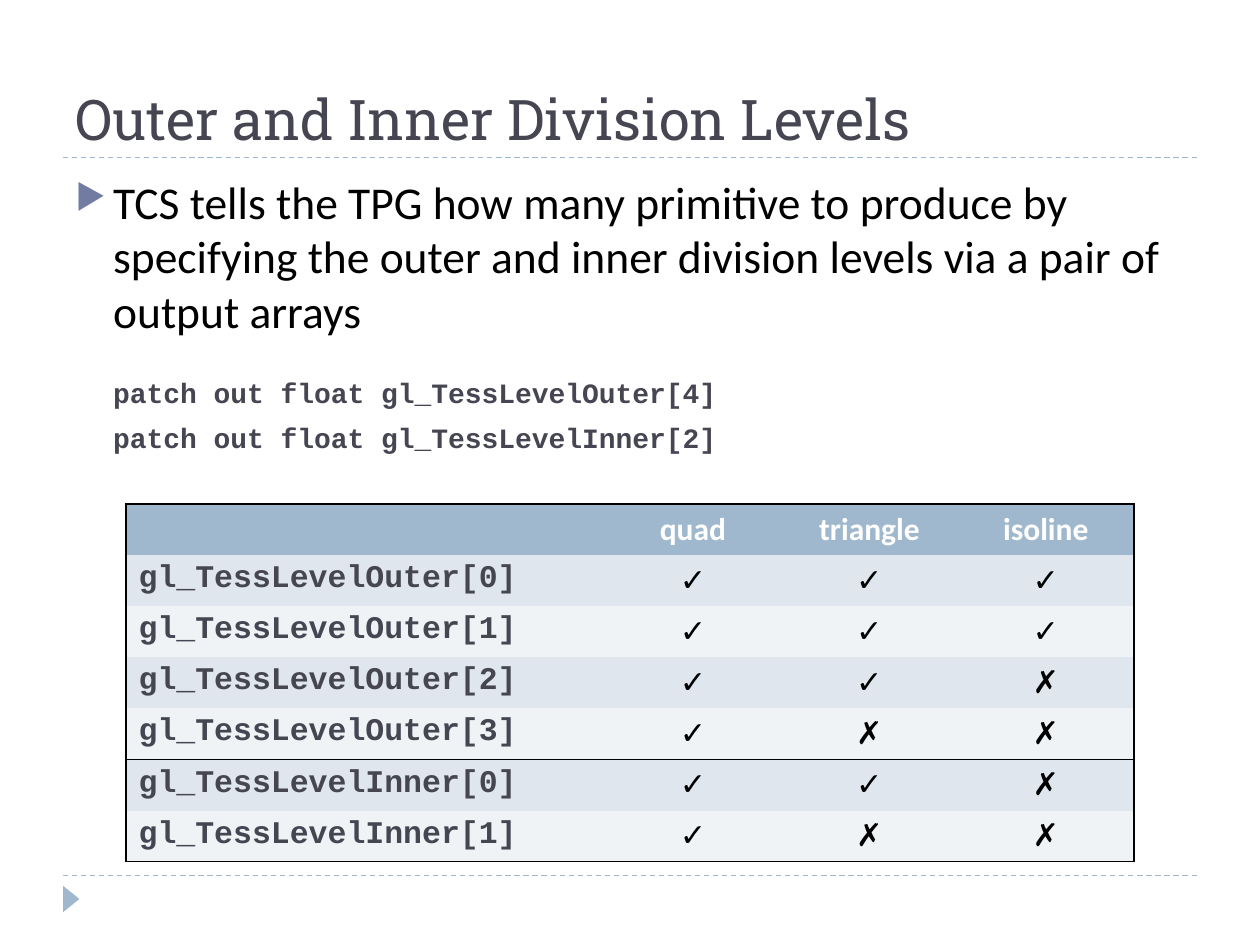
from lxml import etree
from pptx import Presentation, util as u
from pptx.dml.color import RGBColor
from pptx.enum import dml, shapes, text
from pptx.oxml.ns import qn

WIDTH, HEIGHT = 10, 7.5
COLORS = {"paper": "FFFFFF", "ink": "000000", "slate": "464653", "rule": "9FB8CD",
          "bullet": "727CA3", "odd": "DFE6ED", "even": "F0F3F6"}
FORMATS = {
    "title": ({"name": "Roboto Slab", "size": u.Pt(32)}, "slate"),
    "lead": ({"name": "Calibri", "size": u.Pt(26)}, "ink"),
    "code": ({"name": "Courier New", "size": u.Pt(16), "bold": True}, "slate"),
    "head": ({"name": "Calibri", "size": u.Pt(18), "bold": True}, "paper"),
    "level": ({"name": "Courier New", "size": u.Pt(18), "bold": True}, "slate"),
    "mark": ({"name": "Calibri", "size": u.Pt(18), "bold": False}, "ink"),
}
PRIMITIVES = ["quad", "triangle", "isoline"]
LEVELS = [("Outer[0]", "✓✓✓"), ("Outer[1]", "✓✓✓"), ("Outer[2]", "✓✓✗"),
          ("Outer[3]", "✓✗✗"), ("Inner[0]", "✓✓✗"), ("Inner[1]", "✓✗✗")]
LAST_OUTER = 4


def color(name):
    return RGBColor.from_string(COLORS[name])


def inches(box):
    return [u.Inches(length) for length in box]


def write(para, words, style):
    span = para.add_run()
    span.text = words
    values, ink = FORMATS[style]
    for name, value in values.items():
        setattr(span.font, name, value)
    span.font.color.rgb = color(ink)


def text_frame(page, box, anchor):
    frame = page.shapes.add_textbox(*inches(box)).text_frame
    frame.word_wrap = True
    frame.vertical_anchor = anchor
    return frame


def indent(para, margin, first, before):
    para.space_before = u.Pt(before)
    props = para._p.get_or_add_pPr()
    props.set("marL", str(u.Inches(margin)))
    props.set("indent", str(u.Inches(first)))
    return props


def add_bullet(props):
    tint = etree.SubElement(props, qn("a:buClr"))
    etree.SubElement(tint, qn("a:srgbClr"), val=COLORS["bullet"])
    etree.SubElement(props, qn("a:buSzPct"), val="76000")
    etree.SubElement(props, qn("a:buChar"), char="▶")


def draw_frame(page, box):
    left, top, width, height = box
    for y in (top, top + height):
        rule = page.shapes.add_connector(
            shapes.MSO_CONNECTOR.STRAIGHT, *inches((left, y, left + width, y)))
        rule.line.color.rgb = color("rule")
        rule.line.width = u.Pt(0.75)
        rule.line.dash_style = dml.MSO_LINE.DASH
        etree.SubElement(rule._element.spPr, qn("a:effectLst"))
    corner = page.shapes.add_shape(
        shapes.MSO_SHAPE.ISOSCELES_TRIANGLE,
        *inches((left - 0.04, top + height + 0.12, 0.21, 0.13)))
    corner.rotation = 90
    corner.shadow.inherit = False
    corner.fill.solid()
    corner.fill.fore_color.rgb = color("rule")
    corner.line.fill.background()


def draw_title(page, box):
    frame = text_frame(page, box, text.MSO_ANCHOR.BOTTOM)
    write(frame.paragraphs[0], "Outer and Inner Division Levels", "title")


def draw_body(page, box):
    frame = text_frame(page, box, text.MSO_ANCHOR.TOP)
    lead = frame.paragraphs[0]
    add_bullet(indent(lead, 0.3, -0.3, 6))
    write(lead, "TCS tells the TPG how many primitive to produce by specifying "
                "the outer and inner division levels via a pair of output arrays", "lead")
    for array, before in (("Outer[4]", 22), ("Inner[2]", 6.5)):
        para = frame.add_paragraph()
        indent(para, 0.6, -0.3, before)
        write(para, f"patch out float gl_TessLevel{array}", "code")


def set_borders(cell, drawn):
    props = cell._tc.get_or_add_tcPr()
    for side in "LRTB":
        edge = etree.SubElement(props, qn(f"a:ln{side}"), w=str(u.Pt(1)))
        if side in drawn:
            fill = etree.SubElement(edge, qn("a:solidFill"))
            etree.SubElement(fill, qn("a:srgbClr"), val=COLORS["ink"])
        else:
            etree.SubElement(edge, qn("a:noFill"))


def draw_table(page, box):
    rows = [["", *PRIMITIVES]]
    rows += [[f"gl_TessLevel{level}", *marks] for level, marks in LEVELS]
    last_row, last_column = len(rows) - 1, len(PRIMITIVES)
    shares = [0.475] + [0.175] * last_column
    grid = page.shapes.add_table(len(rows), len(shares), *inches(box)).table
    for column, share in zip(grid.columns, shares):
        column.width = u.Inches(box[2] * share)
    for r, row in enumerate(rows):
        grid.rows[r].height = u.Inches(box[3] / len(rows))
        shade = "rule" if r == 0 else "odd" if r % 2 else "even"
        for c, words in enumerate(row):
            cell = grid.cell(r, c)
            edges = {"L": c == 0, "R": c == last_column,
                     "T": r in (0, LAST_OUTER + 1), "B": r in (LAST_OUTER, last_row)}
            set_borders(cell, [side for side, shown in edges.items() if shown])
            cell.fill.solid()
            cell.fill.fore_color.rgb = color(shade)
            para = cell.text_frame.paragraphs[0]
            if c:
                para.alignment = text.PP_ALIGN.CENTER
            if words:
                write(para, words, "head" if r == 0 else "mark" if c else "level")


def main():
    deck = Presentation()
    deck.slide_width, deck.slide_height = inches((WIDTH, HEIGHT))
    page = deck.slides.add_slide(deck.slide_layouts[6])
    margin, rule_top = WIDTH * 0.05, HEIGHT / 6
    content = WIDTH - 2 * margin
    draw_frame(page, (margin, rule_top, content, 5.7))
    draw_title(page, (margin, 0.17, content, 1.08))
    draw_body(page, (margin, 1.33, content, 5.4))
    draw_table(page, (WIDTH * 0.1, 4, WIDTH * 0.8, 2.84))
    deck.save("out.pptx")


if __name__ == "__main__":
    main()
